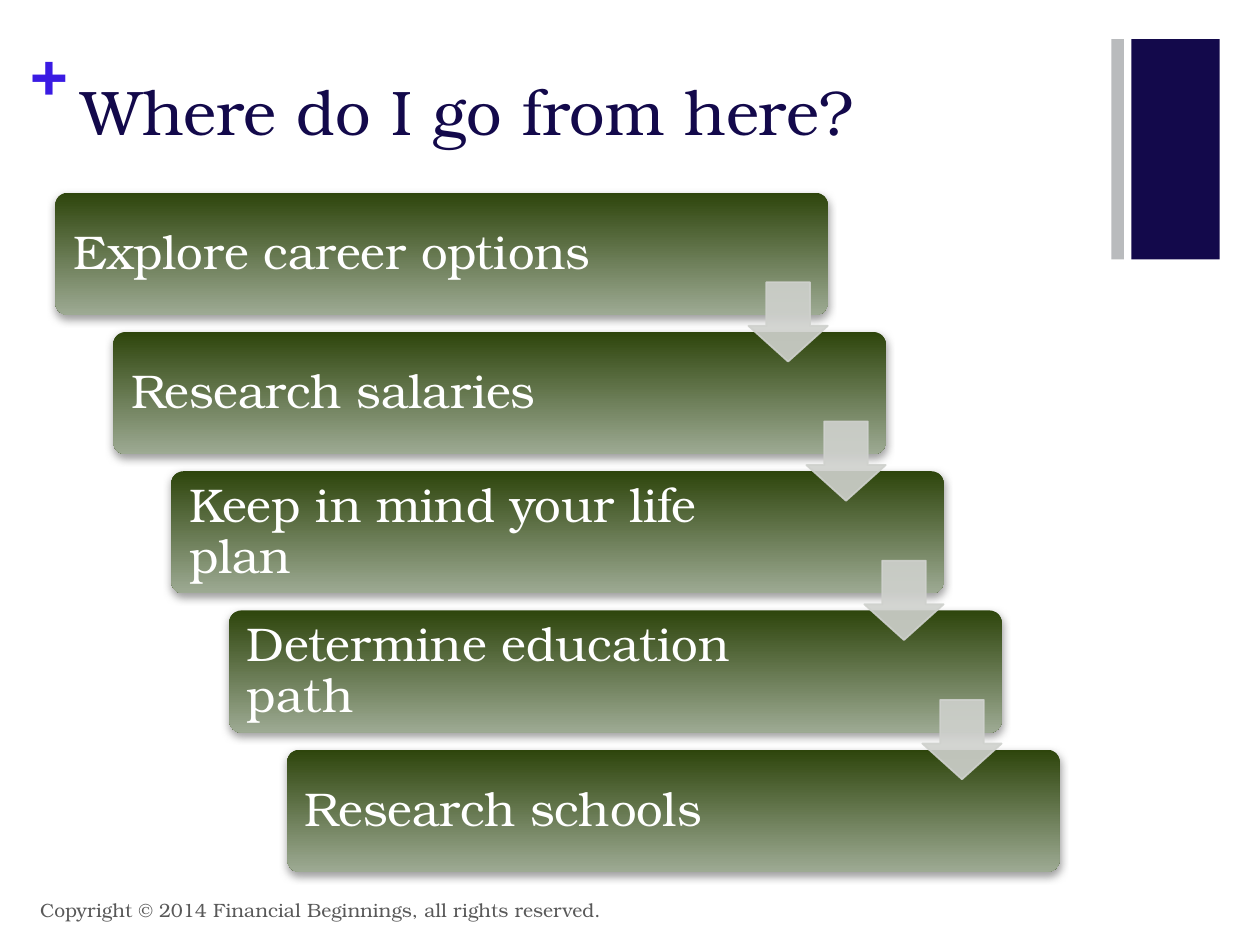
"""Build a slide of five cascading steps towards a career."""
from dataclasses import dataclass

from lxml import etree
from pptx import Presentation
from pptx import util as u
from pptx.dml.color import RGBColor
from pptx.enum import shapes, text
from pptx.oxml.ns import qn


@dataclass(frozen=True)
class Theme:
    font: str = "TeX Gyre Bonum"
    navy: str = "13094B"
    violet: str = "3A1BE3"
    silver: str = "B9BBBD"
    card_top: str = "2E450C"
    card_bottom: str = "9DAA93"
    arrow: str = "CFD1CD"
    shadow: str = "808080"
    white: str = "FFFFFF"
    grey: str = "595959"
    title_size: int = 36
    step_size: int = 27
    note_size: int = 11


THEME = Theme()
STEPS = (
    "Explore career options",
    "Research salaries",
    "Keep in mind your life plan",
    "Determine education path",
    "Research schools",
)
LEFT, TOP = 0.44, 1.53
STEP_X, STEP_Y = 0.46, 1.105
CARD_WIDTH, CARD_HEIGHT = 6.13, 0.97
PADDING = 0.03
ARROW_SIZE, ARROW_DROP = 0.63, 0.71


def inches(*lengths):
    return [u.Inches(length) for length in lengths]


def add_text(page, place, words, size, color, bold=None, inset=None,
             anchor=text.MSO_ANCHOR.TOP, spacing=None):
    box = page.shapes.add_textbox(*inches(*place))
    frame = box.text_frame
    frame.word_wrap = True
    frame.vertical_anchor = anchor
    if inset is not None:
        frame.margin_left = frame.margin_right = u.Inches(inset)
        frame.margin_top = frame.margin_bottom = u.Inches(inset)
    para = frame.paragraphs[0]
    para.line_spacing = spacing
    span = para.add_run()
    span.text = words
    span.font.name = THEME.font
    span.font.size = u.Pt(size)
    span.font.bold = bold
    span.font.color.rgb = RGBColor.from_string(color)
    return box


def add_shape(page, kind, place, adjustments=()):
    shape = page.shapes.add_shape(kind, *inches(*place))
    shape.shadow.inherit = False
    shape.line.fill.background()
    for index, value in enumerate(adjustments):
        shape.adjustments[index] = value
    return shape


def paint(fill, color, opacity=100):
    fill.solid()
    fill.fore_color.rgb = RGBColor.from_string(color)
    if opacity < 100:
        tint = fill.fore_color._xFill.find(qn("a:srgbClr"))
        etree.SubElement(tint, qn("a:alpha"), val=str(opacity * 1000))


def add_bar(page, place, color):
    bar = add_shape(page, shapes.MSO_SHAPE.RECTANGLE, place)
    paint(bar.fill, color)


def add_shadow(shape):
    effects = shape._element.spPr.find(qn("a:effectLst"))
    outer = etree.SubElement(
        effects, qn("a:outerShdw"), blurRad=str(u.Pt(5)),
        dist=str(u.Pt(2)), dir=str(90 * 60000), rotWithShape="0")
    tint = etree.SubElement(outer, qn("a:srgbClr"), val=THEME.shadow)
    etree.SubElement(tint, qn("a:alpha"), val="75000")


def add_step(page, index, words):
    left, top = LEFT + index * STEP_X, TOP + index * STEP_Y
    card = add_shape(page, shapes.MSO_SHAPE.ROUNDED_RECTANGLE,
                     (left, top, CARD_WIDTH, CARD_HEIGHT), (0.1,))
    card.fill.gradient()
    card.fill.gradient_angle = 270
    colors = (THEME.card_top, THEME.card_bottom)
    for position, (stop, color) in enumerate(zip(card.fill.gradient_stops, colors)):
        stop.position = position
        stop.color.rgb = RGBColor.from_string(color)
    add_shadow(card)
    place = (left + PADDING, top + PADDING, 4.99, CARD_HEIGHT - 2 * PADDING)
    add_text(page, place, words, THEME.step_size, THEME.white, inset=0.11,
             anchor=text.MSO_ANCHOR.MIDDLE, spacing=0.9)


def add_arrow(page, index):
    left = LEFT + index * STEP_X + CARD_WIDTH - ARROW_SIZE
    top = TOP + index * STEP_Y + ARROW_DROP
    arrow = add_shape(page, shapes.MSO_SHAPE.DOWN_ARROW,
                      (left, top, ARROW_SIZE, ARROW_SIZE))
    arrow.adjustments[0] = 0.55
    arrow.adjustments[1] = 0.45
    paint(arrow.fill, THEME.arrow, 90)
    paint(arrow.line.fill, THEME.arrow, 90)
    arrow.line.width = u.Pt(1)


def main():
    deck = Presentation()
    deck.slide_width, deck.slide_height = inches(10, 7.5)
    page = deck.slides.add_slide(deck.slide_layouts[6])
    add_bar(page, (8.98, 0.31, 0.7, 1.75), THEME.navy)
    plus = add_text(page, (0.24, 0.25, 0.29, 0.61), "+", THEME.title_size,
                    THEME.violet, bold=True, inset=0)
    plus.text_frame.auto_size = text.MSO_AUTO_SIZE.SHAPE_TO_FIT_TEXT
    add_bar(page, (8.82, 0.31, 0.1, 1.75), THEME.silver)
    add_text(page, (0.55, 0.53, 8.26, 1.22), "Where do I go from here?",
             THEME.title_size, THEME.navy)
    for index, words in enumerate(STEPS):
        add_step(page, index, words)
    for index in range(len(STEPS) - 1):
        add_arrow(page, index)
    add_text(page, (0.22, 7.02, 6.7, 0.4),
             "Copyright © 2014 Financial Beginnings, all rights reserved.",
             THEME.note_size, THEME.grey, anchor=text.MSO_ANCHOR.MIDDLE)
    deck.save("out.pptx")


if __name__ == "__main__":
    main()
